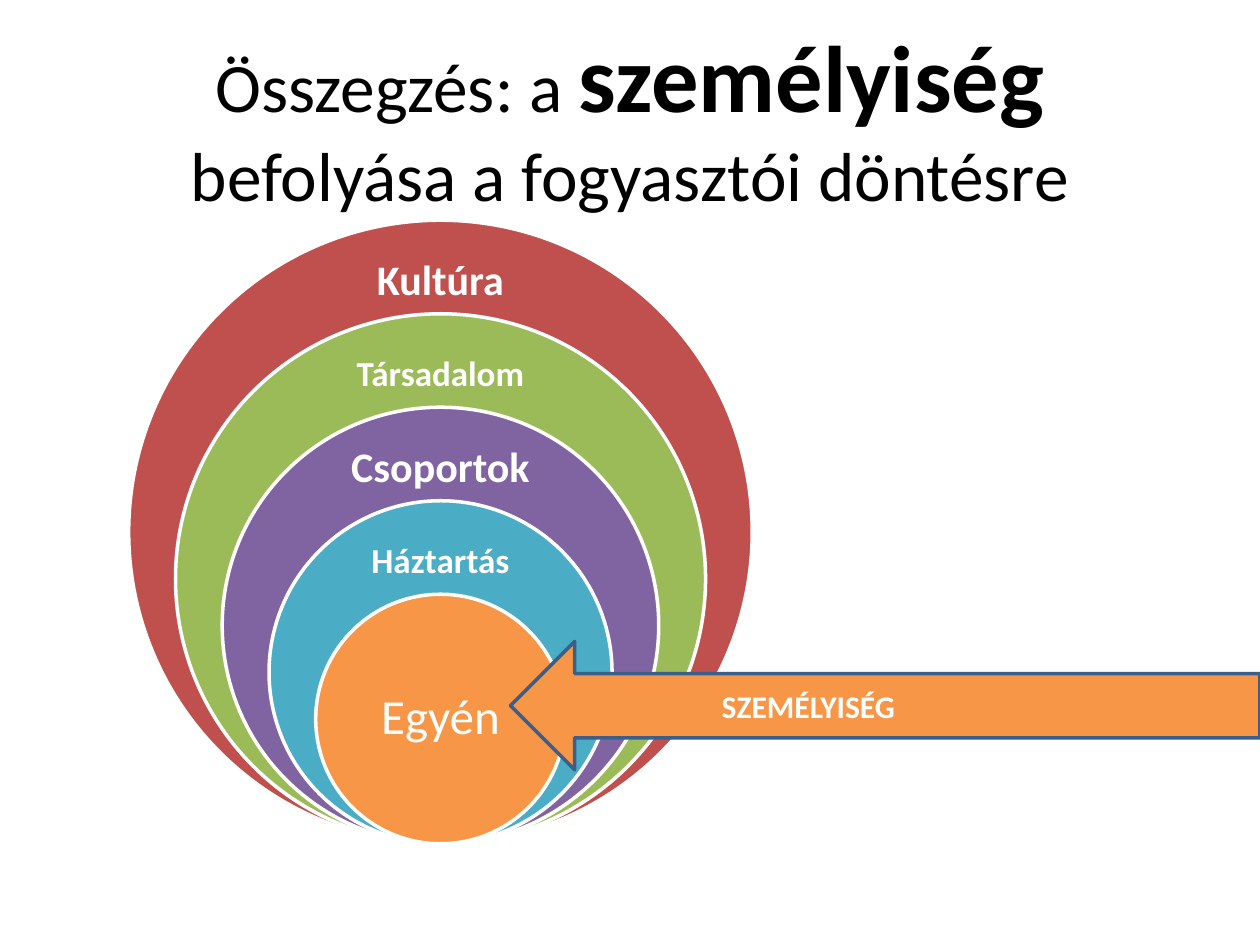
"""Build a slide of nested circles showing how personality affects consumer decisions."""
import dataclasses

import pptx
import pptx.dml.color
import pptx.enum.shapes
import pptx.enum.text
import pptx.util

Cm = pptx.util.Cm
Pt = pptx.util.Pt
MSO_SHAPE = pptx.enum.shapes.MSO_SHAPE
PP_ALIGN = pptx.enum.text.PP_ALIGN
MSO_ANCHOR = pptx.enum.text.MSO_ANCHOR
MSO_AUTO_SIZE = pptx.enum.text.MSO_AUTO_SIZE

FONT = "Calibri"
COLORS = {
    "red": "C0504D",
    "green": "9BBB59",
    "purple": "8064A2",
    "aqua": "4BACC6",
    "orange": "F79646",
    "outline": "3A5F8C",
    "white": "FFFFFF",
    "black": "000000",
}
CENTER_X, BOTTOM = 8.88, 17.01
OUTER_DIAMETER, DIAMETER_STEP = 12.57, 1.885


@dataclasses.dataclass(frozen=True)
class Ring:
    """One circle with its label; lengths are in centimetres."""
    text: str
    color: str
    size: float
    label_width: float
    label_offset: float = 0.62
    label_height: float = 1.23
    bold: bool = True


RINGS = [
    Ring("Kultúra", "red", 24, 4.72),
    Ring("Társadalom", "green", 20, 4.6),
    Ring("Csoportok", "purple", 24, 4.58),
    Ring("Háztartás", "aqua", 20, 3.73),
    Ring("Egyén", "orange", 28, 3.56, 1.25, 2.51, False),
]


def rgb(name: str) -> pptx.dml.color.RGBColor:
    """Return the named colour."""
    return pptx.dml.color.RGBColor.from_string(COLORS[name])


def add_run(p, text: str, size: float, color: str, bold: bool) -> None:
    """Append a formatted run to a paragraph."""
    r = p.add_run()
    r.text = text
    r.font.name = FONT
    r.font.size = Pt(size)
    r.font.bold = bold
    r.font.color.rgb = rgb(color)


def add_filled(shapes, kind, box: tuple, fill: str, line: str):
    """Add a flat preset shape with a 2 pt outline."""
    sp = shapes.add_shape(kind, *map(Cm, box))
    sp.shadow.inherit = False
    sp.fill.solid()
    sp.fill.fore_color.rgb = rgb(fill)
    sp.line.color.rgb = rgb(line)
    sp.line.width = Pt(2)
    return sp


def add_ring(shapes, ring: Ring, index: int) -> None:
    """Draw a circle resting on the common bottom, with its label."""
    d = OUTER_DIAMETER - index * DIAMETER_STEP
    top = BOTTOM - d
    add_filled(shapes, MSO_SHAPE.OVAL, (CENTER_X - d / 2, top, d, d), ring.color, "white")
    tf = shapes.add_textbox(Cm(CENTER_X - ring.label_width / 2), Cm(top + ring.label_offset),
                            Cm(ring.label_width), Cm(ring.label_height)).text_frame
    tf.word_wrap = True
    tf.vertical_anchor = MSO_ANCHOR.MIDDLE
    inset = Cm(ring.size * 0.02)
    tf.margin_left = tf.margin_right = tf.margin_top = tf.margin_bottom = inset
    p = tf.paragraphs[0]
    p.alignment = PP_ALIGN.CENTER
    p.line_spacing = 0.9
    add_run(p, ring.text, ring.size, "white", ring.bold)


def add_title(s) -> None:
    """Fill and place the title placeholder."""
    sp = s.shapes.title
    sp.left, sp.top, sp.width, sp.height = map(Cm, (1.27, 0.76, 22.86, 3.18))
    tf = sp.text_frame
    tf.word_wrap = True
    tf.auto_size = MSO_AUTO_SIZE.NONE
    tf.vertical_anchor = MSO_ANCHOR.MIDDLE
    p = tf.paragraphs[0]
    p.alignment = PP_ALIGN.CENTER
    add_run(p, "Összegzés: a ", 39.6, "black", False)
    add_run(p, "személyiség ", 54, "black", True)
    add_run(p, "befolyása a fogyasztói döntésre", 39.6, "black", False)


def add_arrow(s) -> None:
    """Draw the personality arrow pointing at the individual."""
    sp = add_filled(s.shapes, MSO_SHAPE.RIGHT_ARROW, (10.29, 12.93, 15.11, 2.59),
                    "orange", "outline")
    sp.rotation = 180
    tf = s.shapes.add_textbox(Cm(14.3), Cm(13.72), Cm(8.23), Cm(1.02)).text_frame
    tf.word_wrap = True
    tf.auto_size = MSO_AUTO_SIZE.SHAPE_TO_FIT_TEXT
    add_run(tf.paragraphs[0], "SZEMÉLYISÉG", 18, "white", True)


def main() -> None:
    """Build and save the slide."""
    prs = pptx.Presentation()
    prs.slide_width, prs.slide_height = Cm(25.4), Cm(19.05)
    s = prs.slides.add_slide(prs.slide_layouts.get_by_name("Title Only"))
    add_title(s)
    group = s.shapes.add_group_shape()
    for index, ring in enumerate(RINGS):
        add_ring(group.shapes, ring, index)
    add_arrow(s)
    prs.save("out.pptx")


if __name__ == "__main__":
    main()
